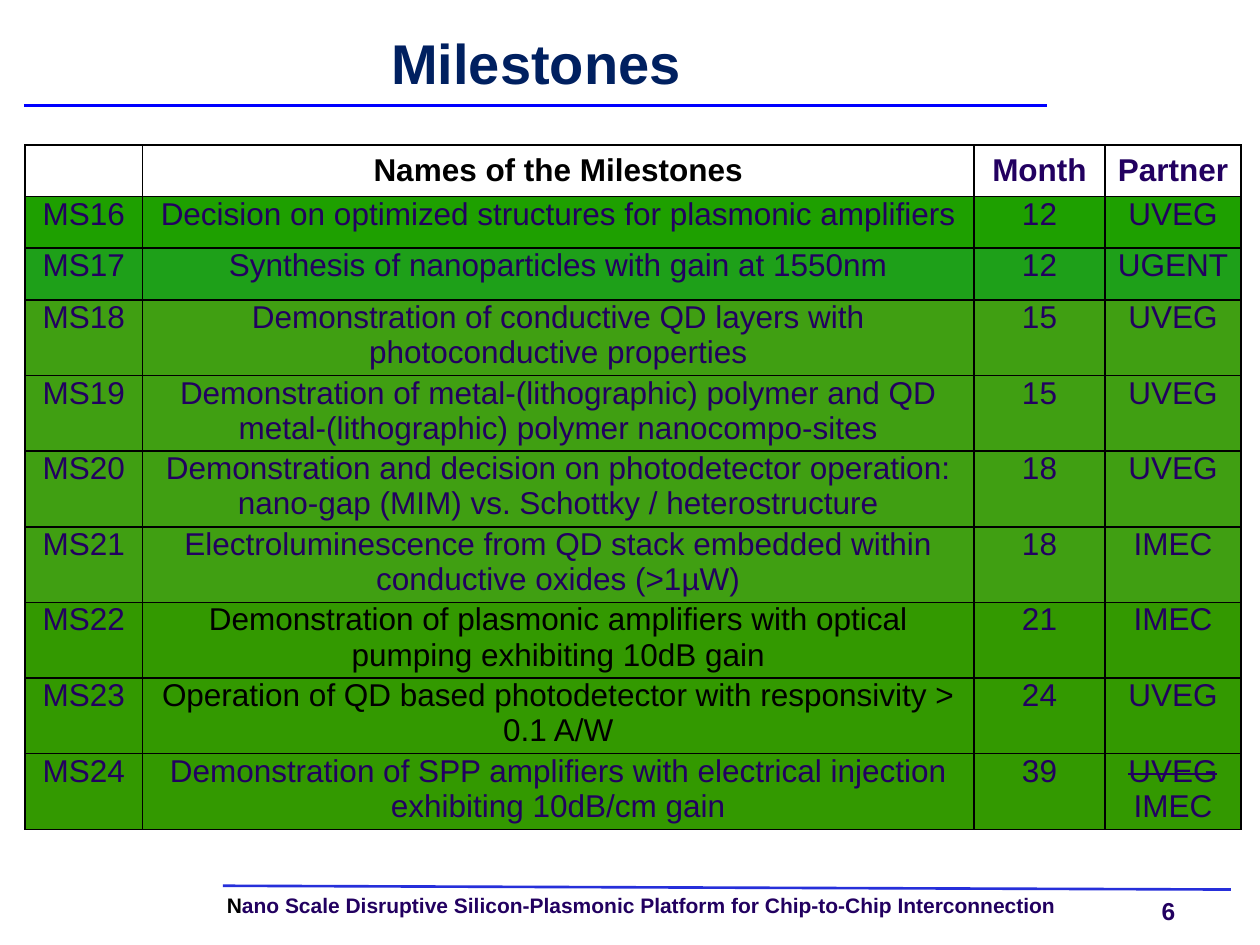
from lxml import etree
from pptx import Presentation
from pptx.dml.color import RGBColor
from pptx.enum import shapes, text
from pptx.oxml import ns
from pptx.util import Inches, Pt

INK, BLACK = "220060", "000000"
EARLY, SYNTHESIS, MIDDLE, LATE = "1EA000", "1EA019", "409F12", "339900"

TITLE = "Milestones"
FOOTER = [("N", BLACK),
          ("ano Scale Disruptive Silicon-Plasmonic Platform for Chip-to-Chip Interconnection", INK)]
PAGE_NUMBER = "6"
HEADER = ["", "Names of the Milestones", "Month", "Partner"]
# number, name, month, partner, row fill, name colour
MILESTONES = [
    ("MS16", "Decision on optimized structures for plasmonic amplifiers",
     "12", "UVEG", EARLY, INK),
    ("MS17", "Synthesis of nanoparticles with gain at 1550nm",
     "12", "UGENT", SYNTHESIS, INK),
    ("MS18", "Demonstration of conductive QD layers with photoconductive properties",
     "15", "UVEG", MIDDLE, INK),
    ("MS19", "Demonstration of metal-(lithographic) polymer and QD "
             "metal-(lithographic) polymer nanocompo-sites",
     "15", "UVEG", MIDDLE, INK),
    ("MS20", "Demonstration and decision on photodetector operation: "
             "nano-gap (MIM) vs. Schottky / heterostructure",
     "18", "UVEG", MIDDLE, INK),
    ("MS21", "Electroluminescence from QD stack embedded within conductive oxides (>1µW)",
     "18", "IMEC", MIDDLE, INK),
    ("MS22", "Demonstration of plasmonic amplifiers with optical pumping exhibiting 10dB gain",
     "21", "IMEC", LATE, BLACK),
    ("MS23", "Operation of QD based photodetector with responsivity > 0.1 A/W",
     "24", "UVEG", LATE, BLACK),
    ("MS24", "Demonstration of SPP amplifiers with electrical injection exhibiting 10dB/cm gain",
     "39", "UVEG\nIMEC", LATE, INK),
]
COLUMN_WIDTHS = [0.93, 6.6, 1.04, 1.08]
ROW_HEIGHT = 0.41


def rgb(color):
    return RGBColor.from_string(color)


def style(font, size, color, bold=False):
    font.name, font.size, font.bold = "Arial", Pt(size), bold
    font.color.rgb = rgb(color)


def clear_margins(frame):
    frame.margin_left = frame.margin_right = frame.margin_top = frame.margin_bottom = 0


def add_rule(slide, start, end, color):
    rule = slide.shapes.add_connector(shapes.MSO_CONNECTOR.STRAIGHT,
                                      *map(Inches, start + end))
    rule.line.color.rgb = rgb(color)
    rule.line.width = Pt(1.5)
    etree.SubElement(rule._element.spPr, ns.qn("a:effectLst"))


def add_footer_text(slide, box, runs, size, wrap=True):
    frame = slide.shapes.add_textbox(*map(Inches, box)).text_frame
    clear_margins(frame)
    frame.word_wrap = wrap
    paragraph = frame.paragraphs[0]
    for words, color in runs:
        run = paragraph.add_run()
        run.text = words
        style(run.font, size, color, bold=True)
    return paragraph


def add_borders(cell):
    """Draw a thin black line on all four sides; call before setting the fill."""
    properties = cell._tc.get_or_add_tcPr()
    for side in ("lnL", "lnR", "lnT", "lnB"):
        line = etree.SubElement(properties, ns.qn(f"a:{side}"), w=str(Pt(1)))
        fill = etree.SubElement(line, ns.qn("a:solidFill"))
        etree.SubElement(fill, ns.qn("a:srgbClr"), val=BLACK)


def fill_cell(cell, words, color, bold=False):
    add_borders(cell)
    cell.text_frame.text = words
    for paragraph in cell.text_frame.paragraphs:
        paragraph.alignment = text.PP_ALIGN.CENTER
        style(paragraph.font, 18, color, bold)
        for run in paragraph.runs:
            style(run.font, 18, color, bold)


def add_milestones(slide):
    row_count = len(MILESTONES) + 1
    table = slide.shapes.add_table(
        row_count, len(HEADER), Inches(0.2), Inches(1.15),
        Inches(sum(COLUMN_WIDTHS)), Inches(ROW_HEIGHT * row_count)).table
    table.first_row = table.horz_banding = False
    for column, width in zip(table.columns, COLUMN_WIDTHS):
        column.width = Inches(width)
    for row in table.rows:
        row.height = Inches(ROW_HEIGHT)

    for i, heading in enumerate(HEADER):
        cell = table.cell(0, i)
        fill_cell(cell, heading, BLACK if i == 1 else INK, bold=True)
        cell.fill.background()
        cell.vertical_anchor = text.MSO_ANCHOR.MIDDLE

    for r, (*values, row_fill, name_color) in enumerate(MILESTONES, start=1):
        for c, value in enumerate(values):
            cell = table.cell(r, c)
            fill_cell(cell, value, name_color if c == 1 else INK)
            cell.fill.solid()
            cell.fill.fore_color.rgb = rgb(row_fill)
            cell.margin_left = cell.margin_right = Inches(0.07)
            cell.margin_top = cell.margin_bottom = 0

    replaced_partner = table.cell(row_count - 1, 3).text_frame.paragraphs[0].runs[0]
    replaced_partner.font._element.set("strike", "sngStrike")


def main():
    deck = Presentation()
    deck.slide_width, deck.slide_height = Inches(10), Inches(7.5)
    slide = deck.slides.add_slide(deck.slide_layouts[5])

    title = slide.shapes.title
    title.left, title.top, title.width, title.height = map(Inches, (0.2, 0.2, 8.11, 0.67))
    frame = title.text_frame
    frame.text = TITLE
    clear_margins(frame)
    frame.vertical_anchor = text.MSO_ANCHOR.MIDDLE
    heading = frame.paragraphs[0]
    heading.alignment = text.PP_ALIGN.CENTER
    heading.line_spacing = Pt(32)
    style(heading.runs[0].font, 32, "002060", bold=True)

    add_footer_text(slide, (1.8, 7.11, 7.14, 0.18), FOOTER, 12).line_spacing = 0.9
    add_footer_text(slide, (9.22, 7.11, 0.4, 0.23), [(PAGE_NUMBER, INK)], 14, wrap=False)
    add_rule(slide, (1.77, 7.03), (9.77, 7.06), "262FDA")
    add_rule(slide, (0.19, 0.84), (8.31, 0.84), "0000FF")
    add_milestones(slide)
    deck.save("out.pptx")


if __name__ == "__main__":
    main()
